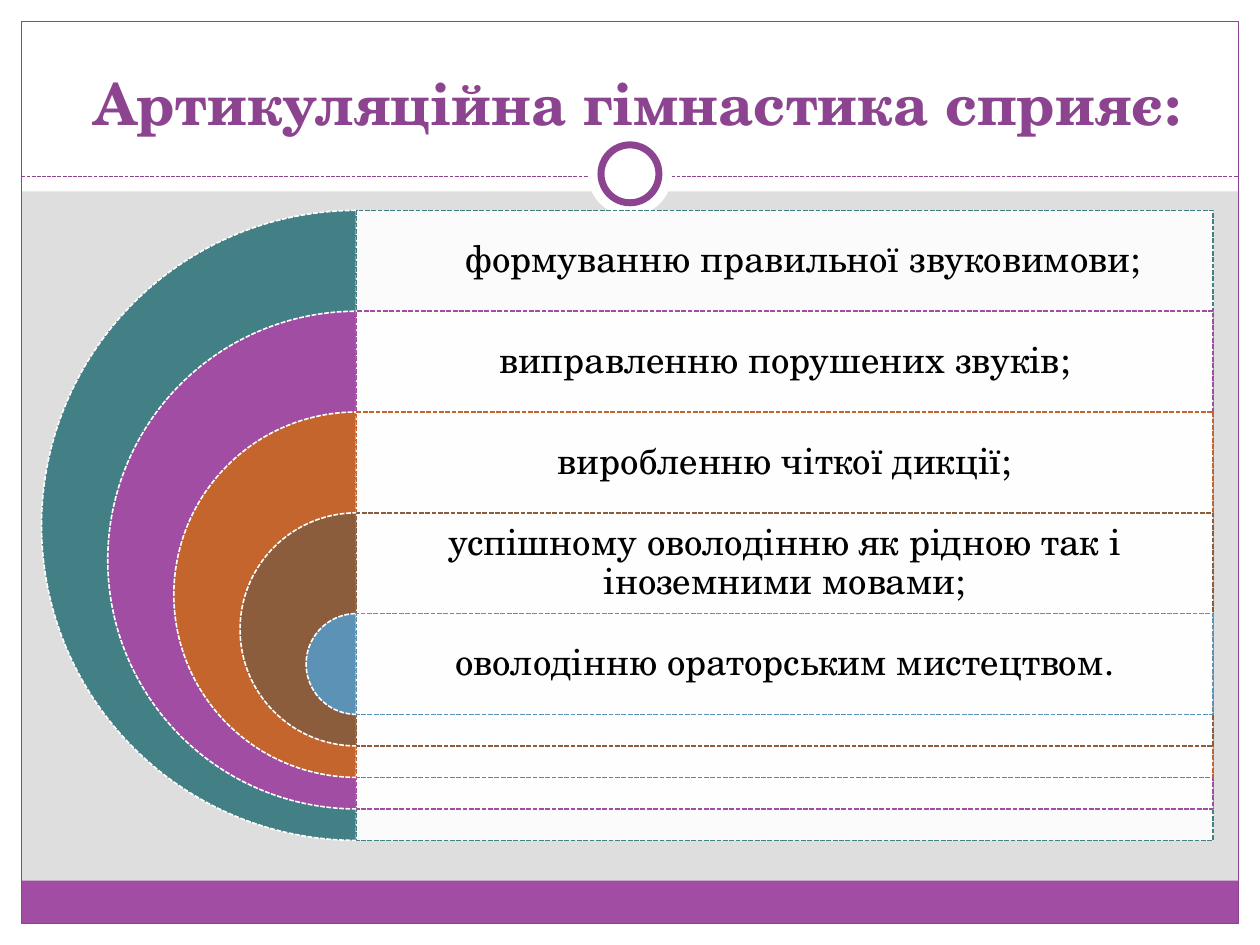
from lxml.etree import SubElement
from pptx import Presentation
from pptx.dml.color import RGBColor
from pptx.enum.dml import MSO_LINE_DASH_STYLE as Dash
from pptx.enum.shapes import MSO_CONNECTOR_TYPE as Connector, MSO_SHAPE as Shape
from pptx.enum.text import MSO_ANCHOR as Anchor, PP_ALIGN as Align
from pptx.oxml.ns import qn
from pptx.util import Inches, Pt

WIDTH, HEIGHT = 10, 7.5
FONT = "TeX Gyre Schola"
WHITE, GREY, PURPLE, PLUM = "FFFFFF", "DEDEDE", "A04DA3", "8D4490"
TITLE = "Артикуляційна гімнастика сприяє:"
BENEFITS = [
    ("формуванню правильної звуковимови;", "438086", 0.29),
    ("виправленню порушених звуків;", PURPLE, 0),
    ("виробленню чіткої дикції;", "C4652D", 0),
    ("успішному оволодінню як рідною так і іноземними мовами;", "8B5D3D", 0),
    ("оволодінню ораторським мистецтвом.", "5C92B5", 0),
]
EDGE, HEADER, RULE = 0.17, 1.52, 1.4
BORDERS = [
    (0, HEIGHT - EDGE, WIDTH, EDGE),
    (0, 0, WIDTH, HEADER),
    (0, 0, EDGE, HEIGHT),
    (WIDTH - EDGE, 0, EDGE, HEIGHT),
]
AXIS, TOP, ROW, PANEL = 2.83, 1.67, 0.8, 6.8
OUTER, SHRINK = 5, 1.05


def color(value):
    """Turn a hex string into a colour."""
    return RGBColor.from_string(value)


def inches(*lengths):
    """Convert a series of lengths to inches."""
    return [Inches(length) for length in lengths]


def set_line(line, value, width, dash=None):
    """Format an outline or a connector line."""
    line.color.rgb = color(value)
    line.width = Pt(width)
    if dash:
        line.dash_style = dash


def add_shape(page, kind, area, fill=None, line=None, width=0.75, dash=None, alpha=None):
    """Add a preset shape with a plain fill and outline."""
    shape = page.shapes.add_shape(kind, *inches(*area))
    shape.shadow.inherit = False
    if fill:
        shape.fill.solid()
        shape.fill.fore_color.rgb = color(fill)
    else:
        shape.fill.background()
    if alpha:
        tone = next(shape.element.spPr.iter(qn("a:srgbClr")))
        SubElement(tone, qn("a:alpha")).set("val", str(alpha * 1000))
    if line:
        set_line(shape.line, line, width, dash)
    else:
        shape.line.fill.background()
    return shape


def write(box, text, size, ink, bold=False, anchor=Anchor.MIDDLE, spacing=None, indent=0):
    """Write one centred paragraph into a box."""
    frame = box.text_frame
    frame.word_wrap = True
    frame.vertical_anchor = anchor
    para = frame.paragraphs[0]
    para.alignment = Align.CENTER
    if spacing:
        para.line_spacing = spacing
    if indent:
        para._p.get_or_add_pPr().set("marL", str(Inches(indent)))
    span = para.add_run()
    span.text = text
    span.font.name, span.font.size, span.font.bold = FONT, Pt(size), bold
    span.font.color.rgb = color(ink)


def add_ring(page, center, size, **style):
    """Add a circle around a centre point."""
    x, y = center
    add_shape(page, Shape.OVAL, (x - size / 2, y - size / 2, size, size), WHITE, **style)


def add_frame(page):
    """Draw the border, the footer band, the rule and its ring."""
    page.background.fill.solid()
    page.background.fill.fore_color.rgb = color(GREY)
    for area in BORDERS:
        add_shape(page, Shape.RECTANGLE, area, WHITE)
    inner = WIDTH - 2 * EDGE
    add_shape(page, Shape.RECTANGLE, (EDGE, 6.99, inner, 0.34), PURPLE)
    add_shape(page, Shape.RECTANGLE, (EDGE, EDGE, inner, HEIGHT - 2 * EDGE), line=PLUM)
    rule = page.shapes.add_connector(
        Connector.STRAIGHT, *inches(EDGE, RULE, WIDTH - EDGE, RULE))
    set_line(rule.line, PLUM, 0.75, Dash.SQUARE_DOT)
    SubElement(rule.element.spPr, qn("a:effectLst"))
    center = (WIDTH / 2, 1.38)
    add_ring(page, center, 0.67)
    add_ring(page, center, 0.46, line=PLUM, width=4)


def add_title(page):
    """Place the title above the frame."""
    title = page.shapes.title
    title.left, title.top, title.width, title.height = inches(0.39, 0.31, 9.33, 0.83)
    write(title, TITLE, 33, PLUM, bold=True, anchor=Anchor.BOTTOM)
    title.element.getparent().append(title.element)


def add_benefit(page, index, text, tone, indent):
    """Add one half disc with its panel and label."""
    size, top = OUTER - index * SHRINK, TOP + index * ROW
    outline = {"width": 0.9, "dash": Dash.SQUARE_DOT}
    disc = add_shape(
        page, Shape.PIE, (AXIS - size / 2, top, size, size), tone, WHITE, **outline)
    disc.adjustments[0], disc.adjustments[1] = 54, 162
    add_shape(
        page, Shape.RECTANGLE, (AXIS, top, PANEL, size), WHITE, tone, alpha=90, **outline)
    box = page.shapes.add_textbox(*inches(AXIS, top, PANEL, ROW))
    frame = box.text_frame
    frame.margin_left = frame.margin_right = Inches(0.09)
    frame.margin_top = frame.margin_bottom = Inches(0.09)
    write(box, text, 21, "000000", spacing=0.9, indent=indent)


def main():
    """Build and save the slide."""
    deck = Presentation()
    deck.slide_width, deck.slide_height = inches(WIDTH, HEIGHT)
    page = deck.slides.add_slide(deck.slide_layouts[5])
    add_frame(page)
    add_title(page)
    for index, benefit in enumerate(BENEFITS):
        add_benefit(page, index, *benefit)
    deck.save("out.pptx")


if __name__ == "__main__":
    main()
